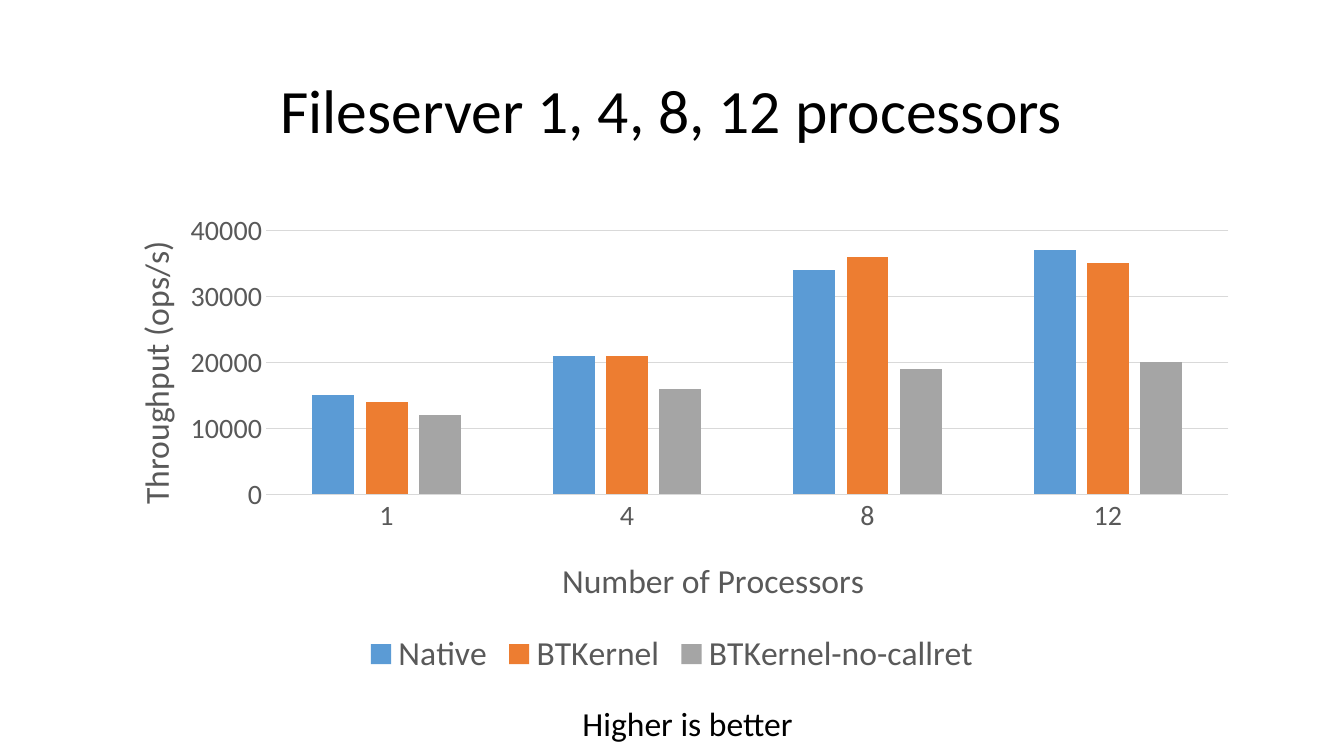
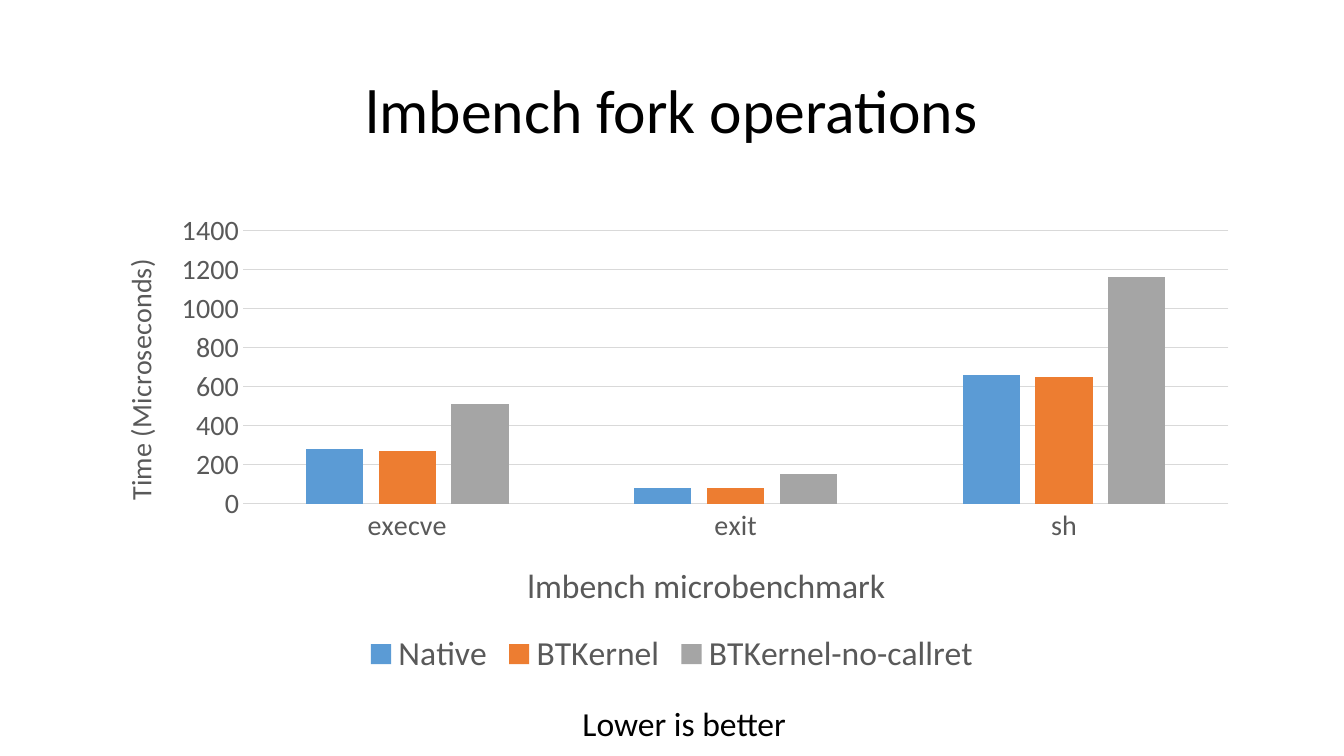
"""Build two benchmark slides, each with a title, a column chart and a caption."""
from pptx import Presentation
from pptx import util as u
from pptx.chart.data import CategoryChartData
from pptx.dml.color import RGBColor
from pptx.enum import chart as ch, text
from pptx.oxml import parse_xml
from pptx.oxml.ns import nsdecls, qn

FONT = "Calibri"
COLORS = {"text": "000000", "label": "595959", "grid": "D9D9D9",
          "Native": "5B9BD5", "BTKernel": "ED7D31", "BTKernel-no-callret": "A5A5A5"}
SLIDES = [
    {"title": "Fileserver 1, 4, 8, 12 processors",
     "caption": "Higher is better",
     "categories": ["1", "4", "8", "12"],
     "series": {"Native": (15000, 21000, 34000, 37000),
                "BTKernel": (14000, 21000, 36000, 35000),
                "BTKernel-no-callret": (12000, 16000, 19000, 20000)},
     "plot": {"x": 0.15, "y": 0.06, "w": 0.83, "h": 0.55},
     "x_title": ("Number of Processors", 24, {"x": 0.4, "y": 0.73}),
     "y_title": ("Throughput (ops/s)", 24, {"x": 0.03, "y": 0.07})},
    {"title": "lmbench fork operations",
     "caption": "Lower is better",
     "categories": ["execve", "exit", "sh"],
     "series": {"Native": (280, 80, 660),
                "BTKernel": (270, 80, 650),
                "BTKernel-no-callret": (510, 150, 1160)},
     "plot": {"x": 0.13, "y": 0.06, "w": 0.85, "h": 0.57},
     "x_title": ("lmbench microbenchmark", 24, {"x": 0.37, "y": 0.74}),
     "y_title": ("Time (Microseconds)", 20, {"x": 0.02, "y": 0.11})},
]
TITLE_BOX = [u.Cm(v) for v in (2.33, 1.01, 29.21, 3.68)]
CHART_BOX = [u.Cm(v) for v in (2.33, 5.08, 29.21, 12.09)]
CAPTION_BOX = [u.Cm(v) for v in (14.43, 17.6, 6, 1.27)]


def rgb(name):
    return RGBColor.from_string(COLORS[name])


def set_font(font, size, color="label"):
    font.name, font.size, font.bold = FONT, u.Pt(size), False
    font.color.rgb = rgb(color)


def put_text(tf, words, size=24, color="text", align=None, spacing=None):
    p = tf.paragraphs[0]
    p.alignment, p.line_spacing = align, spacing
    r = p.add_run()
    r.text = words
    set_font(r.font, size, color)


def layout_xml(box, inner=False):
    target = '<c:layoutTarget val="inner"/>' if inner else ""
    modes = "".join(f'<c:{k}Mode val="edge"/>' for k in "xy")
    sizes = "".join(f'<c:{k} val="{v}"/>' for k, v in box.items())
    return parse_xml(f'<c:layout {nsdecls("c")}><c:manualLayout>{target}{modes}{sizes}'
                     '</c:manualLayout></c:layout>')


def place(parent, box, inner=False):
    for old in parent.findall(qn("c:layout")):
        parent.remove(old)
    tx = parent.find(qn("c:tx"))
    parent.insert(0 if tx is None else parent.index(tx) + 1, layout_xml(box, inner))


def format_axis(axis, words, size, box, rotation):
    axis.major_tick_mark = axis.minor_tick_mark = ch.XL_TICK_MARK.NONE
    set_font(axis.tick_labels.font, 20)
    title = axis.axis_title
    put_text(title.text_frame, words, size, "label")
    title._element.xpath(".//a:bodyPr")[0].set("rot", str(rotation))
    place(title._element, box)


def grid_line(line):
    line.color.rgb, line.width = rgb("grid"), u.Pt(0.75)


def add_column_chart(s, spec):
    data = CategoryChartData()
    data.categories = spec["categories"]
    for name, values in spec["series"].items():
        data.add_series(name, values)
    chart = s.shapes.add_chart(ch.XL_CHART_TYPE.COLUMN_CLUSTERED, *CHART_BOX, data).chart
    chart.has_title = False
    set_font(chart.font, 10, "text")
    plot = chart.plots[0]
    plot.gap_width, plot.overlap, plot.vary_by_categories = 219, -27, False
    for series in plot.series:
        series.format.fill.solid()
        series.format.fill.fore_color.rgb = rgb(series.name)
    format_axis(chart.category_axis, *spec["x_title"], rotation=0)
    format_axis(chart.value_axis, *spec["y_title"], rotation=-5400000)
    grid_line(chart.category_axis.format.line)
    grid_line(chart.value_axis.major_gridlines.format.line)
    chart.value_axis.format.line.fill.background()
    chart.has_legend = True
    chart.legend.position = ch.XL_LEGEND_POSITION.BOTTOM
    chart.legend.include_in_layout = False
    set_font(chart.legend.font, 24)
    place(chart._chartSpace.xpath("c:chart/c:plotArea")[0], spec["plot"], inner=True)


def add_slide(prs, spec):
    s = prs.slides.add_slide(prs.slide_layouts[5])
    title = s.shapes.title
    title.left, title.top, title.width, title.height = TITLE_BOX
    title.text_frame.vertical_anchor = text.MSO_ANCHOR.MIDDLE
    put_text(title.text_frame, spec["title"], 44, align=text.PP_ALIGN.CENTER, spacing=0.9)
    add_column_chart(s, spec)
    tf = s.shapes.add_textbox(*CAPTION_BOX).text_frame
    tf.word_wrap = True
    put_text(tf, spec["caption"])


def main():
    prs = Presentation()
    prs.slide_width, prs.slide_height = u.Cm(33.87), u.Cm(19.05)
    for spec in SLIDES:
        add_slide(prs, spec)
    prs.save("out.pptx")


if __name__ == "__main__":
    main()
